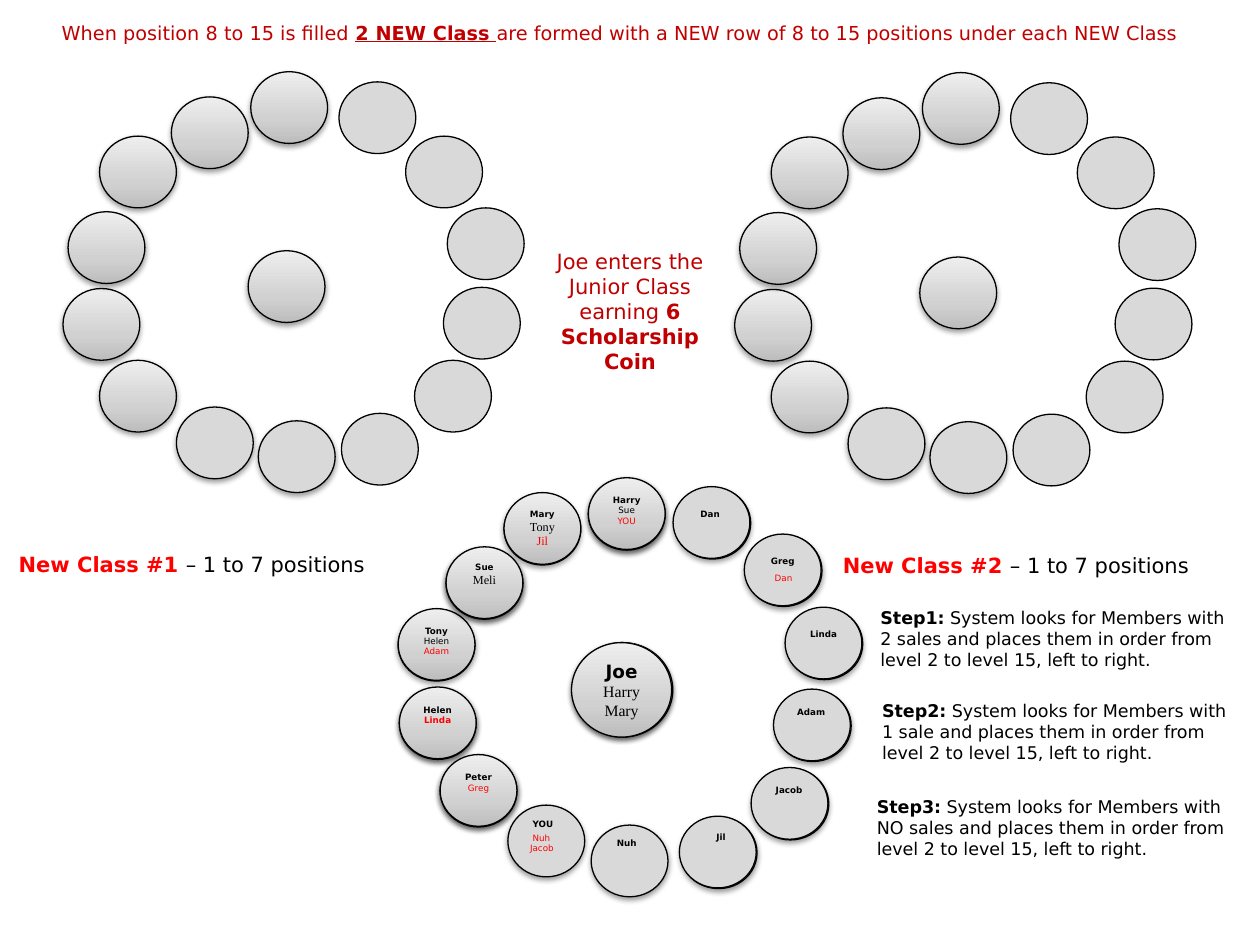
from lxml import etree
from pptx import Presentation, util as u
from pptx.dml.color import RGBColor
from pptx.enum import shapes, text
from pptx.oxml.ns import qn

SANS, SERIF = "DejaVu Sans", "Times New Roman"
BLACK, RED, DARK_RED, GREY = "000000", "FF0000", "C00000", "D9D9D9"
GRADIENT = ((0, "BDBDBD"), (35, "D1D1D1"), (100, "EEEEEE"))
SEAT = (43.9, 41)

SHINY_SEATS = [(36, 164.9), (56.9, 205.9), (56.9, 77.8), (143.3, 41),
               (97.9, 55.4), (38.9, 121)]
FLAT_SEATS = [(193.7, 46.8), (231.8, 77.8), (253.4, 164.2), (236.9, 205.9),
              (195.1, 236.2), (255.6, 118.8)]
SHADED_SEATS = [(100.8, 232.6), (147.6, 240.5)]

HEAD = (5, SANS, BLACK, True)
PLAIN = (5, SANS, BLACK, False)
NOTE = (5, SANS, RED, False)
BOLD_NOTE = (5, SANS, RED, True)
SERIF_PLAIN = (7, SERIF, BLACK, False)
SERIF_NOTE = (7, SERIF, RED, False)

NAMED_SEATS = [
    (288, 281.5, False, 0, [("Mary", HEAD), ("Tony", SERIF_PLAIN), ("Jil", SERIF_NOTE)]),
    (336.2, 273, True, 4, [("Harry", HEAD), ("Sue", PLAIN), ("YOU", NOTE)]),
    (227.5, 347.8, False, 4, [("Tony", HEAD), ("Helen", PLAIN), ("Adam", NOTE)]),
    (254.9, 312.5, True, 9, [("Sue", HEAD), ("Meli", SERIF_PLAIN)]),
    (228.2, 392.6, True, 9, [("Helen", HEAD), ("Linda", BOLD_NOTE)]),
    (251.5, 431.2, True, 9, [("Peter", HEAD), ("Greg", NOTE)]),
]
LABELLED_SEATS = [
    (290.2, 460.1, False, [("YOU", HEAD, 297.2, 464.6), ("Nuh", NOTE, 297.2, 472.5),
                           ("Jacob", NOTE, 295.8, 478.3)]),
    (337.8, 471.5, False, [("Nuh", HEAD, 345.4, 475.4)]),
    (425.3, 305.2, True, [("Greg", HEAD, 433.4, 313.9), ("Dan", NOTE, 435.6, 324)]),
    (388.2, 466.4, True, [("Jil", HEAD, 402.3, 471.8)]),
    (429.2, 438.6, True, [("Jacob", HEAD, 436.2, 445.1)]),
    (442, 393.8, True, [("Adam", HEAD, 448.4, 400.5)]),
    (448.6, 347, True, [("Linda", HEAD, 455.8, 355.7)]),
    (384.6, 278.1, True, [("Dan", HEAD, 393.1, 287.3)]),
]
STEPS = [(496, 343.4, "Step1:", "2 sales"), (497, 396.7, "Step2:", "1 sale"),
         (494, 451.4, "Step3:", "NO sales")]


def rgb(value):
    return RGBColor.from_string(value)


def write(p, runs):
    for content, (size, font, color, bold) in runs:
        r = p.add_run()
        r.text = content
        r.font.size, r.font.name, r.font.bold = u.Pt(size), font, bold
        r.font.color.rgb = rgb(color)


def place(sp, box):
    sp.left, sp.top, sp.width, sp.height = map(u.Pt, box)


def add_shadow(sp):
    effects = sp._element.spPr.find(qn("a:effectLst"))
    shadow = etree.SubElement(effects, qn("a:outerShdw"), blurRad="40000",
                              dist="20000", dir="5400000", rotWithShape="0")
    color = etree.SubElement(shadow, qn("a:srgbClr"), val=BLACK)
    etree.SubElement(color, qn("a:alpha"), val="38000")


def add_gradient(sp):
    sp.fill.gradient()
    sp.fill.gradient_angle = 90
    stops = sp._element.spPr.find(qn("a:gradFill")).find(qn("a:gsLst"))
    for stop in list(stops):
        stops.remove(stop)
    for position, color in GRADIENT:
        stop = etree.SubElement(stops, qn("a:gs"), pos=str(position * 1000))
        etree.SubElement(stop, qn("a:srgbClr"), val=color)


def add_circle(parent, x, y, size=SEAT, shiny=True, shaded=True):
    sp = parent.add_shape(shapes.MSO_SHAPE.OVAL, *map(u.Pt, (x, y, *size)))
    sp.shadow.inherit = False
    if shiny:
        add_gradient(sp)
    else:
        sp.fill.solid()
        sp.fill.fore_color.rgb = rgb(GREY)
    sp.line.color.rgb = rgb(BLACK)
    sp.line.width = u.Pt(0.75)
    if shaded:
        add_shadow(sp)
    return sp


def fill_circle(sp, lines, bottom=0):
    tf = sp.text_frame
    tf.word_wrap = False
    tf.vertical_anchor = text.MSO_ANCHOR.MIDDLE
    tf.margin_left = tf.margin_right = tf.margin_top = 0
    tf.margin_bottom = u.Pt(bottom)
    for i, line in enumerate(lines):
        p = tf.add_paragraph() if i else tf.paragraphs[0]
        p.alignment = text.PP_ALIGN.CENTER
        write(p, [line])


def add_text(s, box, runs, align=text.PP_ALIGN.LEFT):
    sp = s.shapes.add_textbox(*map(u.Pt, box))
    sp.text_frame.word_wrap = True
    p = sp.text_frame.paragraphs[0]
    p.alignment = align
    write(p, runs)


def add_title(s):
    sp = s.shapes.title
    place(sp, (12.2, 5.8, 684, 21.6))
    tf = sp.text_frame
    tf.word_wrap = True
    tf.auto_size = text.MSO_AUTO_SIZE.NONE
    tf.vertical_anchor = text.MSO_ANCHOR.TOP
    p = tf.paragraphs[0]
    p.alignment = text.PP_ALIGN.CENTER
    p.line_spacing = 1.2
    plain, strong = (11, SANS, DARK_RED, False), (11, SANS, DARK_RED, True)
    write(p, [("When position 8 to 15 is filled ", plain), ("2 NEW Class ", strong),
              ("are formed with a NEW row of 8 to 15 positions under each NEW Class", plain)])
    p.runs[1].font.underline = True


def add_empty_class(s, dx, dy, center_y):
    ring = s.shapes.add_group_shape().shapes
    for seats, shiny, shaded in ((FLAT_SEATS, False, False), (SHINY_SEATS, True, True),
                                 (SHADED_SEATS, False, True)):
        for x, y in seats:
            add_circle(ring, x + dx, y + dy, shiny=shiny, shaded=shaded)
    add_circle(s.shapes, 141.8 + dx, center_y)


def add_current_class(s):
    add_circle(s.shapes, 327, 367.2, (57.5, 54))
    joe = add_circle(s.shapes, 326.6, 367.2, (57.2, 54))
    fill_circle(joe, [("Joe", (10.5, SANS, BLACK, True)),
                      ("Harry", (9, SERIF, BLACK, False)),
                      ("Mary", (9, SERIF, BLACK, False))])
    for x, y, shaded, bottom, lines in NAMED_SEATS:
        add_circle(s.shapes, x, y + 0.4, shiny=False, shaded=shaded)
        fill_circle(add_circle(s.shapes, x, y), lines, bottom)
    for x, y, backed, labels in LABELLED_SEATS:
        if backed:
            add_circle(s.shapes, x + 0.5, y + 0.4, shiny=False)
        add_circle(s.shapes, x, y, shiny=False, shaded=not backed)
        for content, style, left, top in labels:
            add_text(s, (left, top, 41.8, 13), [(content, style)])


def add_captions(s):
    for x, y, name in ((3.6, 311.8, "New Class #1 "), (474.5, 312.2, "New Class #2 ")):
        add_text(s, (x, y, 242, 21.8), [(name, (12, SANS, RED, True)),
                                        ("– 1 to 7 positions", (12, SANS, BLACK, False))])
    add_text(s, (298.1, 138.2, 123.8, 79.9),
             [("Joe enters the Junior Class earning ", (12, SANS, DARK_RED, False)),
              ("6 Scholarship Coin", (12, SANS, DARK_RED, True))], text.PP_ALIGN.CENTER)
    for x, y, step, sales in STEPS:
        add_text(s, (x, y, 213.8, 43.6),
                 [(step, (10, SANS, BLACK, True)),
                  (f" System looks for Members with {sales} and places them in order "
                   "from level 2 to level 15, left to right.", (10, SANS, BLACK, False))])


def main():
    prs = Presentation()
    prs.slide_width, prs.slide_height = u.Pt(720), u.Pt(540)
    s = prs.slides.add_slide(prs.slide_layouts[5])
    add_title(s)
    add_empty_class(s, 0, 0, 143.3)
    add_empty_class(s, 383.8, 0.5, 146.9)
    add_current_class(s)
    add_captions(s)
    prs.save("out.pptx")


if __name__ == "__main__":
    main()
